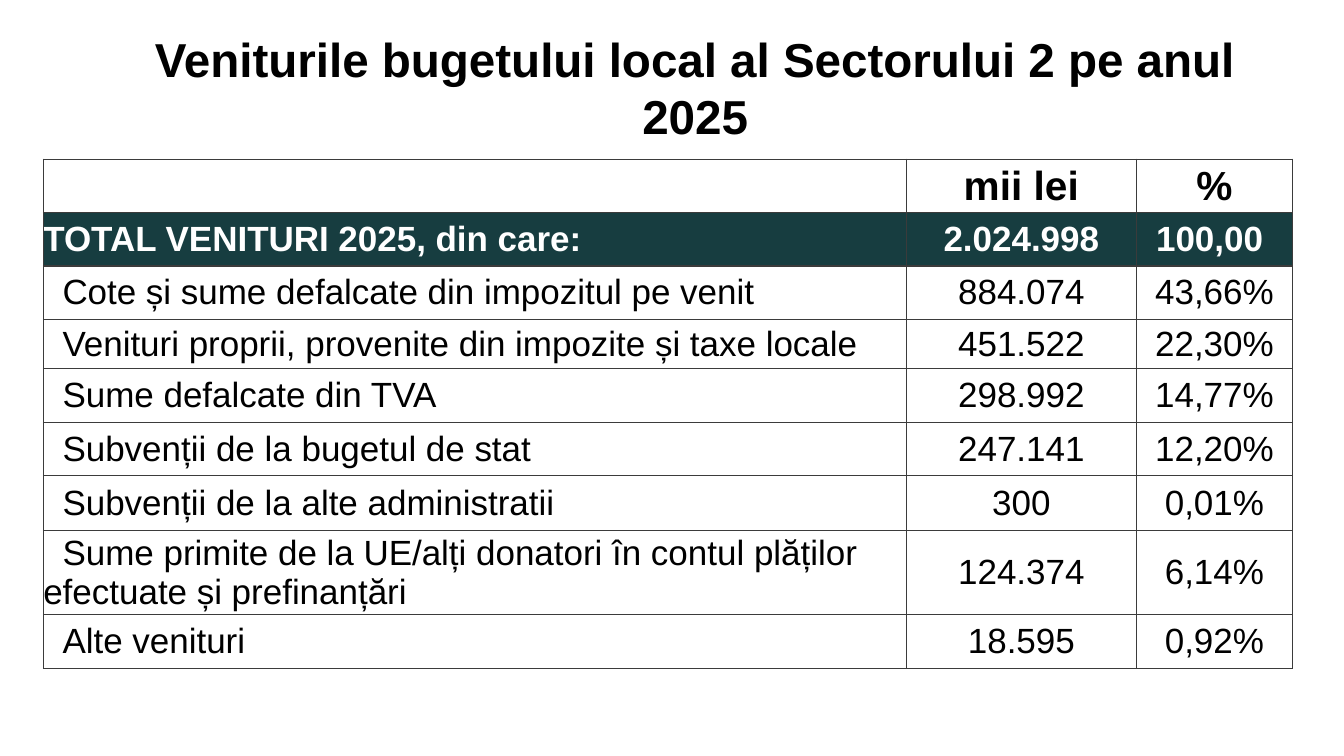
from dataclasses import dataclass

from lxml import etree
from pptx import Presentation
from pptx.dml.color import RGBColor
from pptx.enum.text import MSO_ANCHOR, PP_ALIGN
from pptx.oxml.ns import qn
from pptx.util import Inches, Pt

MIDDLE = MSO_ANCHOR.MIDDLE
LEFT, CENTER = PP_ALIGN.LEFT, PP_ALIGN.CENTER

TITLE = "Veniturile bugetului local al Sectorului 2 pe anul 2025"
HEADER = ("", "mii lei", "%")
TOTAL = ("TOTAL VENITURI 2025, din care:", "2.024.998", "100,00 ")
ITEMS = [
    ("Cote și sume defalcate din impozitul pe venit", "884.074", "43,66%"),
    ("Venituri proprii, provenite din impozite și taxe locale", "451.522", "22,30%"),
    ("Sume defalcate din TVA", "298.992", "14,77%"),
    ("Subvenții de la bugetul de stat", "247.141", "12,20%"),
    ("Subvenții de la alte administratii", "300", "0,01%"),
    ("Sume primite de la UE/alți donatori în contul plăților efectuate și prefinanțări",
     "124.374", "6,14%"),
    ("Alte venituri", "18.595", "0,92%"),
]
COL_WIDTHS = (8.56, 2.28, 1.55)
ROW_HEIGHT = 0.53
SPECIAL_HEIGHTS = {3: 0.49, 6: 0.54, 7: 0.84}
ITEM_INDENT = 0.19


@dataclass(frozen=True)
class Theme:
    font: str = "Arial"
    text: str = "000000"
    inverse: str = "FFFFFF"
    band: str = "173D40"
    border: str = "3B3B3B"
    title_size: int = 34
    header_size: int = 29
    body_size: int = 25
    border_width: int = 1


THEME = Theme()


def style_text(p, size, color, bold, align):
    p.alignment = align
    for r in p.runs:
        r.font.name, r.font.size, r.font.bold = THEME.font, Pt(size), bold
        r.font.color.rgb = RGBColor.from_string(color)


def add_borders(cell):
    """Outline a cell; the lines must precede its fill in the XML."""
    tcPr = cell._tc.get_or_add_tcPr()
    for i, side in enumerate(("a:lnL", "a:lnR", "a:lnT", "a:lnB")):
        ln = etree.Element(qn(side), w=str(Pt(THEME.border_width)))
        fill = etree.SubElement(ln, qn("a:solidFill"))
        etree.SubElement(fill, qn("a:srgbClr"), val=THEME.border)
        tcPr.insert(i, ln)


def fill_cell(cell, text, row, col):
    header, total = row == 0, row == 1
    cell.vertical_anchor = MIDDLE
    cell.margin_top = cell.margin_bottom = 0
    cell.margin_left = cell.margin_right = Inches(0.07 if header else 0)
    if total:
        cell.fill.solid()
        cell.fill.fore_color.rgb = RGBColor.from_string(THEME.band)
    else:
        cell.fill.background()
    add_borders(cell)
    p = cell.text_frame.paragraphs[0]
    p.text = text
    if col == 0 and row > 1:
        pPr = p._p.get_or_add_pPr()
        pPr.set("marL", "0")
        pPr.set("indent", str(Inches(ITEM_INDENT)))
    style_text(p, THEME.header_size if header else THEME.body_size,
               THEME.inverse if total else THEME.text,
               header or total, CENTER if col else LEFT)


def add_title(s):
    title = s.shapes.title
    title.left, title.top = Inches(1.32), Inches(0.32)
    title.width, title.height = Inches(11.15), Inches(1.08)
    tf = title.text_frame
    tf.text = TITLE
    tf.word_wrap = True
    tf.vertical_anchor = MIDDLE
    style_text(tf.paragraphs[0], THEME.title_size, THEME.text, True, CENTER)


def add_revenue_table(s):
    rows = [HEADER, TOTAL, *ITEMS]
    heights = [SPECIAL_HEIGHTS.get(i, ROW_HEIGHT) for i in range(len(rows))]
    table = s.shapes.add_table(
        len(rows), len(COL_WIDTHS), Inches(0.43), Inches(1.58),
        Inches(sum(COL_WIDTHS)), Inches(sum(heights))).table
    table.first_row = table.horz_banding = False
    for column, width in zip(table.columns, COL_WIDTHS):
        column.width = Inches(width)
    for i, (values, height) in enumerate(zip(rows, heights)):
        table.rows[i].height = Inches(height)
        for j, text in enumerate(values):
            fill_cell(table.cell(i, j), text, i, j)


def main():
    prs = Presentation()
    prs.slide_width, prs.slide_height = Inches(13.33), Inches(7.5)
    s = prs.slides.add_slide(prs.slide_layouts[5])
    add_title(s)
    add_revenue_table(s)
    prs.save("out.pptx")


if __name__ == "__main__":
    main()
